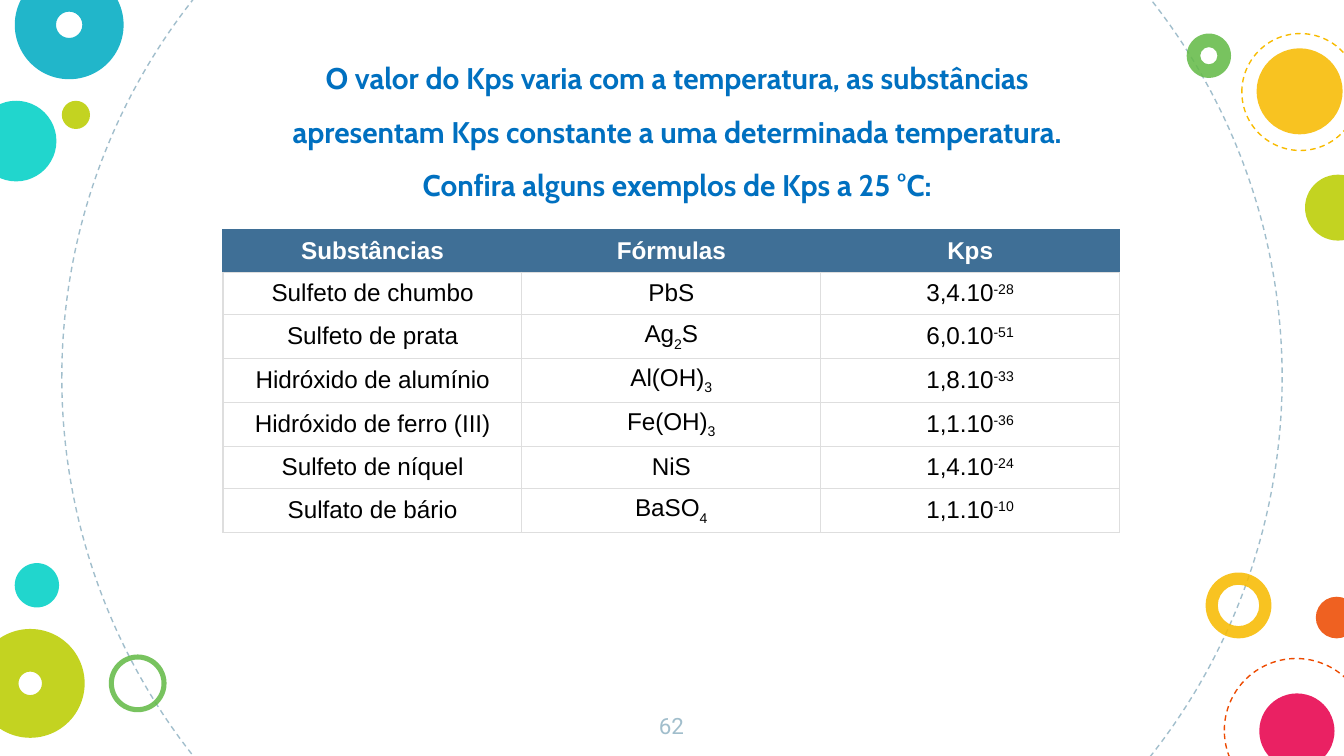
"""Build the slide on Kps values at 25 °C."""
from dataclasses import dataclass

from lxml.etree import SubElement
from pptx import Presentation
from pptx.dml.color import RGBColor
from pptx.enum.dml import MSO_LINE
from pptx.enum.shapes import MSO_SHAPE
from pptx.enum.text import MSO_ANCHOR, MSO_AUTO_SIZE, PP_ALIGN
from pptx.oxml import parse_xml
from pptx.oxml.ns import nsdecls, qn
from pptx.util import Inches, Pt


@dataclass(frozen=True)
class Theme:
    teal: str = "00D1C6"
    blue: str = "00ACC3"
    lime: str = "BBCD00"
    green: str = "65BB48"
    gold: str = "F8BB00"
    red: str = "ED4A00"
    pink: str = "E8004C"
    mist: str = "A1BECC"
    title: str = "0070C0"
    head: str = "3F6F96"
    rule: str = "DEDEDE"
    white: str = "FFFFFF"
    black: str = "000000"
    alpha: int = 87000
    thin: float = 0.75
    large: int = 16
    body: int = 13
    small: int = 12


THEME = Theme()

RINGS = [
    (0.46, -1.73, 9.08, THEME.mist),
    (9.11, 4.9, 1.07, THEME.red),
    (9.24, 0.25, 0.87, THEME.gold),
]
DISCS = [
    (-0.18, 0.75, 0.6, THEME.teal, None),
    (8.97, 4.26, 0.49, THEME.gold, 0.186),
    (0.11, -0.22, 0.81, THEME.blue, 0.379),
    (0.46, 0.75, 0.21, THEME.lime, None),
    (0.81, 4.87, 0.43, THEME.green, 0.088),
    (9.79, 4.44, 0.31, THEME.red, None),
    (-0.18, 4.68, 0.81, THEME.lime, 0.392),
    (9.37, 5.16, 0.56, THEME.pink, None),
    (8.83, 0.25, 0.33, THEME.green, 0.306),
    (9.35, 0.36, 0.64, THEME.gold, None),
    (9.71, 1.3, 0.49, THEME.lime, None),
    (0.11, 4.19, 0.33, THEME.teal, None),
]
TITLE = (
    "O valor do Kps varia com a temperatura, as substâncias apresentam Kps "
    "constante a uma determinada temperatura. Confira alguns exemplos de Kps a 25 °C:"
)
ROWS = [
    ("Substâncias", "Fórmulas", "Kps"),
    ("Sulfeto de chumbo", "PbS", "3,4.10^-28"),
    ("Sulfeto de prata", "Ag_2_S", "6,0.10^-51"),
    ("Hidróxido de alumínio", "Al(OH)_3", "1,8.10^-33"),
    ("Hidróxido de ferro (III)", "Fe(OH)_3", "1,1.10^-36"),
    ("Sulfeto de níquel", "NiS", "1,4.10^-24"),
    ("Sulfato de bário", "BaSO_4", "1,1.10^-10"),
]


def style(run, face, size, color, bold=False):
    """Set the font of a run."""
    font = run.font
    font.name, font.size, font.bold = face, Pt(size), bold
    font.color.rgb = RGBColor.from_string(color)


def add_round(slide, kind, left, top, size):
    """Add a round shape without shadow."""
    shape = slide.shapes.add_shape(
        kind, Inches(left), Inches(top), Inches(size), Inches(size))
    shape.shadow.inherit = False
    return shape


def add_ring(slide, left, top, size, color):
    """Add a dashed circle."""
    ring = add_round(slide, MSO_SHAPE.OVAL, left, top, size)
    ring.fill.background()
    ring.line.color.rgb = RGBColor.from_string(color)
    ring.line.width = Pt(THEME.thin)
    ring.line.dash_style = MSO_LINE.DASH


def add_disc(slide, left, top, size, color, band):
    """Add a translucent disc, or a donut when a band is given."""
    kind = MSO_SHAPE.DONUT if band else MSO_SHAPE.OVAL
    disc = add_round(slide, kind, left, top, size)
    if band:
        disc.adjustments[0] = band
    disc.line.fill.background()
    disc.fill.solid()
    disc.fill.fore_color.rgb = RGBColor.from_string(color)
    tint = disc.fill._xPr.find(".//" + qn("a:srgbClr"))
    SubElement(tint, qn("a:alpha"), val=str(THEME.alpha))


def add_text(slide, box, text, face, size, color, bold=False):
    """Add a centred text box and return its frame."""
    frame = slide.shapes.add_textbox(*map(Inches, box)).text_frame
    frame.text = text
    frame.word_wrap = True
    line = frame.paragraphs[0]
    line.alignment = PP_ALIGN.CENTER
    style(line.runs[0], face, size, color, bold)
    return frame


def add_edges(cell, colors):
    """Draw the four borders of a cell."""
    props = cell._tc.get_or_add_tcPr()
    for spot, (side, color) in enumerate(zip("LRTB", colors)):
        edge = parse_xml(
            f'<a:ln{side} {nsdecls("a")} w="{Pt(THEME.thin)}"><a:solidFill>'
            f'<a:srgbClr val="{color}"/></a:solidFill></a:ln{side}>')
        props.insert(spot, edge)


def fill_cell(cell, text, head):
    """Write a cell, with _ for a subscript and ^ for a superscript."""
    cell.vertical_anchor = MSO_ANCHOR.MIDDLE
    cell.margin_left = cell.margin_right = Inches(0.07)
    cell.margin_top = cell.margin_bottom = Inches(0.04)
    cell.fill.solid()
    cell.fill.fore_color.rgb = RGBColor.from_string(THEME.head if head else THEME.white)
    side = THEME.head if head else THEME.rule
    add_edges(cell, (side, side, side, THEME.rule))
    line = cell.text_frame.paragraphs[0]
    line.alignment = PP_ALIGN.CENTER
    shift = "30000" if "^" in text else "-25000"
    for spot, part in enumerate(text.replace("^", "_").split("_")):
        run = line.add_run()
        run.text = part
        style(run, "Arial", THEME.body, THEME.white if head else THEME.black, head)
        if spot % 2:
            run.font._element.set("baseline", shift)


def add_grid(slide, box, rows):
    """Add the table with its header row."""
    table = slide.shapes.add_table(len(rows), len(rows[0]), *map(Inches, box)).table
    table.horz_banding = False
    for r, row in enumerate(rows):
        for c, text in enumerate(row):
            fill_cell(table.cell(r, c), text, r == 0)


def main():
    """Build and save the slide."""
    deck = Presentation()
    deck.slide_width = Inches(10)
    deck.slide_height = deck.slide_width * 9 // 16
    slide = deck.slides.add_slide(deck.slide_layouts[6])
    for ring in RINGS:
        add_ring(slide, *ring)
    for disc in DISCS:
        add_disc(slide, *disc)
    page = add_text(slide, (4.74, 5.2, 0.51, 0.43), "62", "Roboto", THEME.small, THEME.mist)
    page.margin_top = page.margin_bottom = Inches(0.1)
    add_grid(slide, (1.66, 1.71, 6.67, 2.21), ROWS)
    title = add_text(
        slide, (1.93, 0.28, 6.22, 1.26), TITLE, "Cabin", THEME.large, THEME.title, True)
    title.vertical_anchor = MSO_ANCHOR.MIDDLE
    title.auto_size = MSO_AUTO_SIZE.SHAPE_TO_FIT_TEXT
    title.paragraphs[0].line_spacing = 1.5
    deck.save("out.pptx")


if __name__ == "__main__":
    main()
